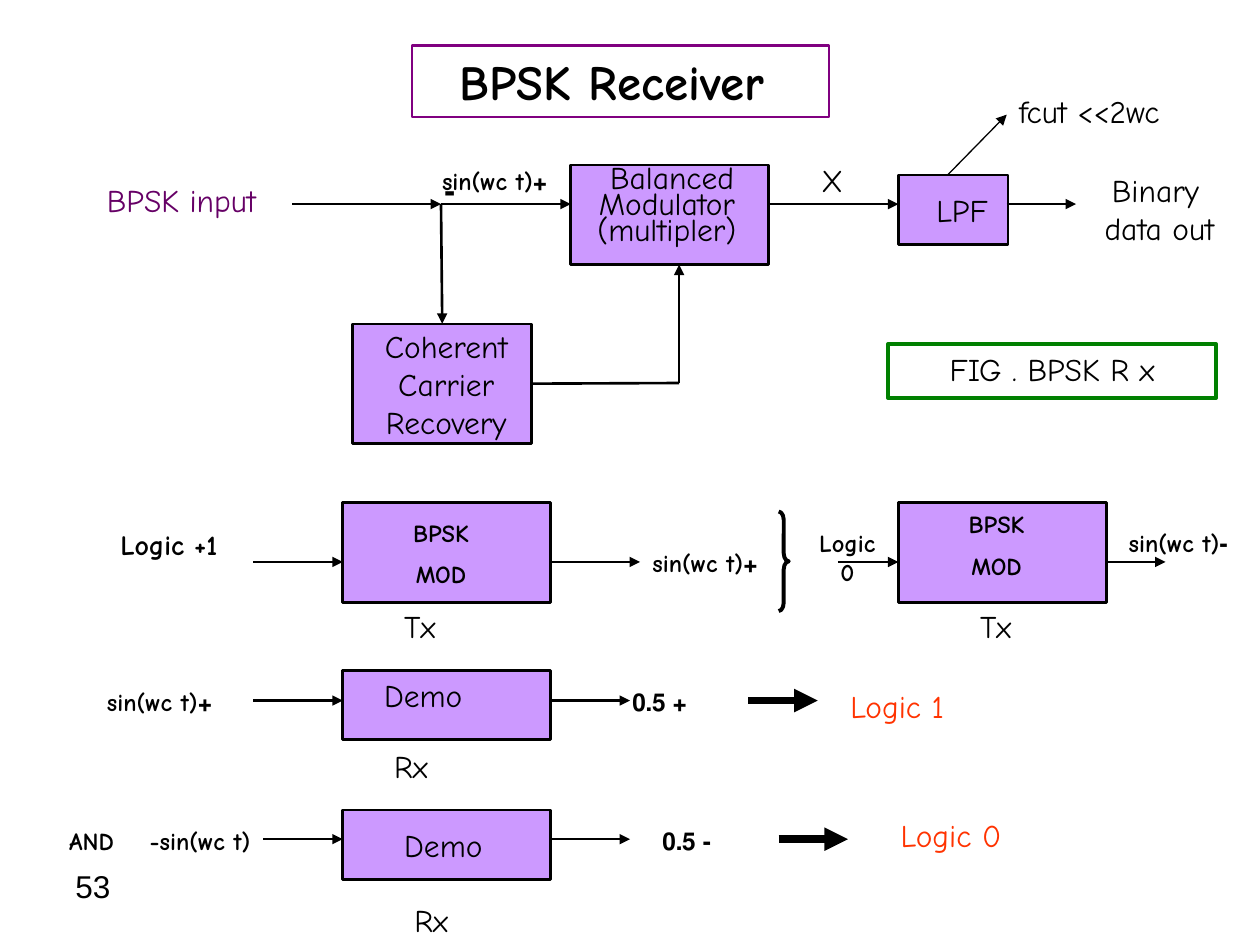
import pptx
import pptx.util
import pptx.dml.color
import pptx.enum.shapes
import pptx.enum.text
import pptx.oxml.ns
from lxml import etree

Inches, Pt = pptx.util.Inches, pptx.util.Pt
SHAPE = pptx.enum.shapes.MSO_SHAPE
ALIGN = pptx.enum.text.PP_ALIGN
ANCHOR = pptx.enum.text.MSO_ANCHOR
qn = pptx.oxml.ns.qn

BLACK, LILAC, PURPLE, RED = "000000", "CC99FF", "660066", "FF3300"
MOD, DEMO = (1.65, 0.79), (1.65, 0.55)

# Blocks: name -> left, top, width, height
BLOCKS = {
    "modulator": (4.53, 1.31, 1.57, 0.79),
    "carrier": (2.8, 2.57, 1.42, 0.95),
    "lpf": (7.13, 1.39, 0.87, 0.55),
    "mod 1": (2.72, 3.99, *MOD),
    "mod 0": (7.13, 3.99, *MOD),
    "demo 1": (2.72, 5.32, *DEMO),
    "demo 0": (2.72, 6.43, *DEMO),
}
# Horizontal arrows: y -> list of (start x, end x)
ARROWS = {
    1.62: [(3.5, 4.53), (2.32, 3.5), (6.1, 7.13), (7.99, 8.54)],
    4.46: [(2.01, 2.72), (4.37, 5.08), (6.65, 7.13), (8.78, 9.25)],
    5.56: [(2.01, 2.72), (4.37, 5)],
    6.66: [(2.09, 2.72), (4.37, 5)],
}
THICK_ARROWS = [(5.94, 5.56), (6.18, 6.66)]

# Labels: text, (left, top, width, height), format
SMALL = dict(size=14, bold=True)
CENTER = dict(align=ALIGN.CENTER)
LABELS = [
    ("BPSK input", (0.75, 1.39, 1.81, 0.4), dict(color=PURPLE)),
    ("Balanced\nModulator \n(multipler) ", (4.55, 1.42, 1.57, 0.7),
     dict(CENTER, rtl=False, line=6)),
    ("LPF", (7.28, 1.47, 0.71, 0.4), CENTER),
    ("Binary data out ", (8.54, 1.31, 1.26, 0.7), CENTER),
    ("X", (6.42, 1.23, 0.47, 0.4), {}),
    ("fcut <<2wc", (7.99, 0.68, 1.81, 0.4), {}),
    ("+sin(wc t)", (3.41, 1.27, 1.18, 0.69), SMALL),
    ("-", (3.43, 1.31, 0.57, 0.4), dict(bold=True, font="TeX Gyre Bonum")),
    ("Logic +1", (0.83, 4.14, 1.02, 0.64), dict(CENTER, size=16, bold=True)),
    ("BPSK\nMOD", (2.87, 4.06, 1.26, 0.68), dict(SMALL, **CENTER)),
    ("Tx", (3.11, 4.77, 0.63, 0.4), {}),
    ("+sin(wc t)", (5.08, 4.3, 1.18, 0.33), SMALL),
    ("Logic 0", (6.33, 4.14, 0.79, 0.57), dict(SMALL, **CENTER)),
    ("BPSK\nMOD", (7.28, 3.99, 1.26, 0.68), dict(SMALL, **CENTER)),
    ("Tx", (7.68, 4.77, 0.63, 0.4), {}),
    ("-sin(wc t)", (8.86, 4.14, 1.1, 0.33), SMALL),
    ("+sin(wc t)", (0.75, 5.4, 1.18, 0.33), SMALL),
    ("Demo", (2.95, 5.32, 0.94, 0.4), {}),
    ("Rx", (3.03, 5.88, 0.71, 0.4), {}),
    ("+ 0.5", (4.92, 5.4, 0.94, 0.33), SMALL),
    ("Logic 1", (6.65, 5.4, 1.34, 0.4), dict(color=RED)),
    ("AND", (0.45, 6.51, 0.7, 0.33), SMALL),
    ("-sin(wc t)", (1.09, 6.51, 1.1, 0.33), dict(SMALL, rtl=False)),
    ("Demo", (3.11, 6.51, 0.94, 0.4), {}),
    ("Rx", (3.19, 7.1, 0.71, 0.4), {}),
    ("- 0.5", (5.16, 6.51, 0.94, 0.33), SMALL),
    ("Logic 0", (7.05, 6.43, 1.34, 0.4), dict(color=RED)),
    ("53", (0.5, 6.83, 2.33, 0.52), dict(font="Arial", rtl=False)),
]


def rgb(value):
    return pptx.dml.color.RGBColor.from_string(value)


def write(sp, text, size=18, color=BLACK, bold=False, font="Comic Neue",
          align=ALIGN.LEFT, rtl=True, line=None, gap=0.5,
          anchor=ANCHOR.TOP, wrap=True):
    tf = sp.text_frame
    tf.word_wrap = wrap
    tf.vertical_anchor = anchor
    for i, content in enumerate(text.split("\n")):
        p = tf.add_paragraph() if i else tf.paragraphs[0]
        p.alignment = align
        if rtl:
            p._p.get_or_add_pPr().set("rtl", "1")
        if line:
            p.line_spacing = Pt(line)
        if gap and (i or line):
            p.space_before = Pt(size * gap)
        r = p.add_run()
        r.text = content
        r.font.size, r.font.bold, r.font.name = Pt(size), bold, font
        r.font.color.rgb = rgb(color)


def add_box(s, at, fill=None, line=BLACK, width=1.5, kind=SHAPE.RECTANGLE):
    sp = s.shapes.add_shape(kind, *map(Inches, at))
    sp.shadow.inherit = False
    if fill:
        sp.fill.solid()
        sp.fill.fore_color.rgb = rgb(fill)
    else:
        sp.fill.background()
    sp.line.color.rgb = rgb(line)
    sp.line.width = Pt(width)
    return sp


def add_line(s, start, end, width=1.5, arrow=True):
    cx = s.shapes.add_connector(pptx.enum.shapes.MSO_CONNECTOR.STRAIGHT,
                                *map(Inches, (*start, *end)))
    cx.line.color.rgb = rgb(BLACK)
    cx.line.width = Pt(width)
    if arrow:
        etree.SubElement(cx.line._get_or_add_ln(), qn("a:tailEnd"), type="triangle")
    etree.SubElement(cx._element.spPr, qn("a:effectLst"))
    return cx


def main():
    prs = pptx.Presentation()
    prs.slide_width, prs.slide_height = Inches(10), Inches(7.5)
    s = prs.slides.add_slide(prs.slide_layouts[6])

    # Title and caption frames
    title = add_box(s, (3.27, 0.36, 3.31, 0.57), line="800080")
    write(title, "BPSK Receiver ", size=28, bold=True, rtl=False, **CENTER)
    caption = add_box(s, (7.05, 2.73, 2.6, 0.43), line="008000", width=2.25)
    write(caption, "FIG . BPSK R x", **CENTER)

    # Blocks
    blocks = {name: add_box(s, at, LILAC) for name, at in BLOCKS.items()}
    write(blocks["carrier"], "Coherent \nCarrier \nRecovery ", gap=0,
          anchor=ANCHOR.MIDDLE, wrap=False, **CENTER)

    # Signal arrows
    for y, spans in ARROWS.items():
        for x1, x2 in spans:
            add_line(s, (x1, y), (x2, y))
    for x, y in THICK_ARROWS:
        add_line(s, (x, y), (x + 0.55, y), width=4.5)

    # Carrier recovery loop and filter note
    tap = add_line(s, (3.5, 1.62), (3.5, 2.57))
    tap.end_connect(blocks["carrier"], 0)
    feed = add_line(s, (4.21, 3.04), (5.39, 3.04), arrow=False)
    feed.begin_connect(blocks["carrier"], 3)
    add_line(s, (5.39, 3.04), (5.39, 2.1))
    add_line(s, (7.52, 1.39), (7.99, 0.91), width=0.75)

    # Brace between the two transmitter cases
    brace = add_box(s, (6.18, 4.06, 0.08, 0.79), width=2.25, kind=SHAPE.RIGHT_BRACE)
    brace.adjustments[0] = 0.82

    # Labels
    for text, at, style in LABELS:
        write(s.shapes.add_textbox(*map(Inches, at)), text, **style)

    prs.save("out.pptx")


if __name__ == "__main__":
    main()
